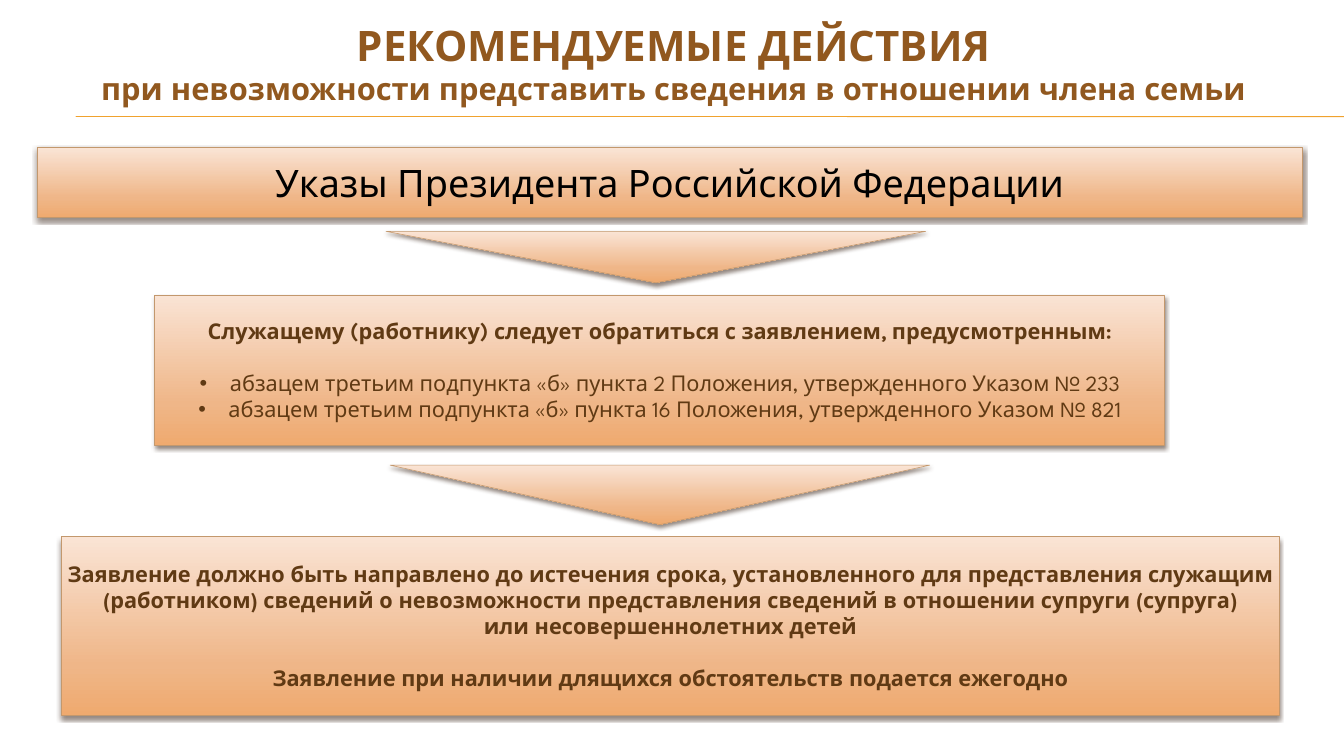
from lxml.etree import SubElement
from pptx import Presentation
from pptx.dml.color import RGBColor
from pptx.enum.shapes import MSO_CONNECTOR, MSO_SHAPE
from pptx.enum.text import MSO_ANCHOR, MSO_AUTO_SIZE, PP_ALIGN
from pptx.oxml.ns import qn
from pptx.util import Inches, Pt

WIDE, HIGH = Inches(26.67), Inches(15)
HEAD, BODY = "League Spartan", "Karla"
SIZE, GAP = 31, 37  # body text and the space that sets a paragraph apart
HUES = {
    "title": "91581F", "text": "603A14", "black": "000000",
    "rule": "F0A22E", "edge": "C3986D", "shade": "4E3B30",
}
STOPS = [(0, "FAE4D5"), (72, "EFB688"), (100, "EFAA6F")]


def hue(name):
    return RGBColor.from_string(HUES[name])


def place(x, y, w, h):
    """Turn percent of the slide's size into lengths."""
    return [int(part * full / 100)
            for part, full in zip((x, y, w, h), (WIDE, HIGH, WIDE, HIGH))]


def add_rule(slide, start, end):
    x, y, right, low = place(5.62, start, 100, end)
    rule = slide.shapes.add_connector(MSO_CONNECTOR.STRAIGHT, x, y, right, low)
    rule.line.color.rgb = hue("rule")
    rule.line.width = Pt(0.75)
    SubElement(rule.element.spPr, qn("a:effectLst"))


def add_panel(slide, kind, box):
    """Add a shape with the peach gradient and a soft shadow below."""
    panel = slide.shapes.add_shape(kind, *place(*box))
    panel.line.color.rgb = hue("edge")
    panel.line.width = Pt(0.79)

    # Three gradient stops, light at the top
    panel.fill.gradient()
    panel.fill.gradient_angle = 270
    props = panel.element.spPr
    stops = props.find(".//" + qn("a:gsLst"))
    stops.clear()
    for share, tint in STOPS:
        stop = SubElement(stops, qn("a:gs"), pos=str(share * 1000))
        SubElement(stop, qn("a:srgbClr"), val=tint)

    # Shadow
    panel.shadow.inherit = False
    shade = SubElement(props.find(qn("a:effectLst")), qn("a:outerShdw"),
                       blurRad=str(Pt(6)), dist=str(Pt(4)), dir="5400000",
                       rotWithShape="0")
    tint = SubElement(shade, qn("a:srgbClr"), val=HUES["shade"])
    SubElement(tint, qn("a:alpha"), val="60000")
    return panel


def style(para, size, color="text", bold=True, font=HEAD, gap=0):
    para.alignment = PP_ALIGN.CENTER
    para.space_before = Pt(gap)
    for run in para.runs:
        run.font.size = Pt(size)
        run.font.name = font
        run.font.bold = bold
        run.font.color.rgb = hue(color)


def add_bullet(para):
    props = para._p.get_or_add_pPr()
    indent = Inches(0.6)
    props.set("marL", str(indent))
    props.set("indent", str(-indent))
    SubElement(props, qn("a:buFont"), typeface="Arial")
    SubElement(props, qn("a:buChar"), char="•")


def add_box(slide, box, lines):
    panel = add_panel(slide, MSO_SHAPE.RECTANGLE, box)
    frame = panel.text_frame
    frame.word_wrap = True
    frame.vertical_anchor = MSO_ANCHOR.MIDDLE
    frame.text = "\n".join(lines)
    return frame.paragraphs


def set_title(slide):
    title = slide.shapes.title
    title.left, title.top, title.width, title.height = place(
        2.02, 2.2, 96.25, 12.33)
    frame = title.text_frame
    frame.text = ("РЕКОМЕНДУЕМЫЕ ДЕЙСТВИЯ\n"
                  "при невозможности представить сведения в отношении члена семьи")
    frame.word_wrap = True
    frame.auto_size = MSO_AUTO_SIZE.NONE
    frame.vertical_anchor = MSO_ANCHOR.TOP
    for para, size in zip(frame.paragraphs, (60, 44)):
        style(para, size, "title")


def main():
    deck = Presentation()
    deck.slide_width, deck.slide_height = WIDE, HIGH
    slide = deck.slides.add_slide(deck.slide_layouts[5])

    # Heading and the double rule below it
    set_title(slide)
    add_rule(slide, 15.33, 15.33)
    add_rule(slide, 15.4, 15.47)

    # Legal basis
    basis, = add_box(slide, (2.74, 19.53, 94.19, 9.27),
                     ["Указы Президента Российской Федерации"])
    style(basis, 54, "black", bold=False)

    # Arrows between the steps
    for box in ((28.72, 30.6, 40.16, 6.8), (29.02, 61.53, 40.16, 7.87)):
        add_panel(slide, MSO_SHAPE.FLOWCHART_MERGE, box)

    # What to apply under
    lead, *items = add_box(slide, (11.51, 39, 75.14, 19.93), [
        "Служащему (работнику) следует обратиться с заявлением, предусмотренным:",
        "абзацем третьим подпункта «б» пункта 2 Положения, утвержденного Указом № 233",
        "абзацем третьим подпункта «б» пункта 16 Положения, утвержденного Указом № 821",
    ])
    style(lead, SIZE, font=BODY)
    for item, gap in zip(items, (GAP, 0)):
        style(item, SIZE, bold=False, gap=gap)
        add_bullet(item)

    # When to apply
    term, yearly = add_box(slide, (4.54, 71, 90.66, 23.6), [
        "Заявление должно быть направлено до истечения срока, установленного "
        "для представления служащим (работником) сведений о невозможности "
        "представления сведений в отношении супруги (супруга)\v"
        "или несовершеннолетних детей",
        "Заявление при наличии длящихся обстоятельств подается ежегодно",
    ])
    style(term, SIZE)
    style(yearly, SIZE, gap=GAP)

    deck.save("out.pptx")


if __name__ == "__main__":
    main()
